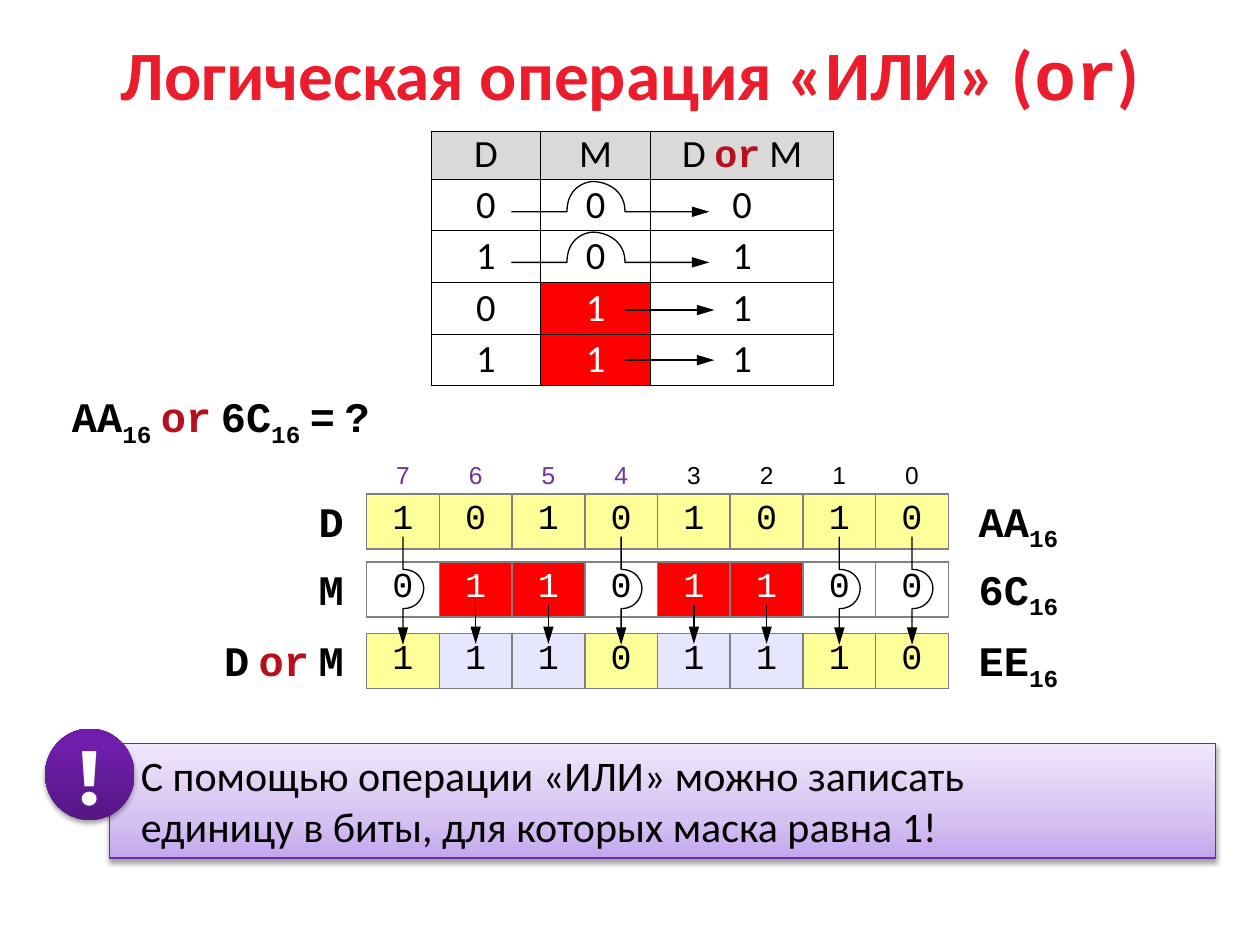
"""Build a slide explaining the bitwise OR operation with a truth table and a mask example."""
import copy
from dataclasses import dataclass
from typing import Any, Optional

import pptx
import pptx.dml.color
import pptx.enum.shapes
import pptx.enum.text
import pptx.oxml
import pptx.oxml.ns
import pptx.util

Cm = pptx.util.Cm
Pt = pptx.util.Pt
ALIGN = pptx.enum.text.PP_ALIGN
ANCHOR = pptx.enum.text.MSO_ANCHOR
SHAPE = pptx.enum.shapes.MSO_SHAPE


@dataclass(frozen=True)
class Theme:
    black: str = "000000"
    white: str = "FFFFFF"
    title_red: str = "EB1D2C"
    keyword: str = "B6101C"
    mask: str = "FF0000"
    header: str = "D9D9D9"
    kept: str = "FFFF99"
    raised: str = "E6E6FF"
    grid: str = "808080"
    high_bits: str = "7030A0"
    callout_line: str = "6E2C9F"
    callout_stops: tuple = ((0, "C5A6EE"), (0.35, "D6C2F2"), (1, "EFE7FB"))
    badge_stops: tuple = ((0, "551784"), (0.8, "6F1EAB"), (1, "701CAF"))
    sans: str = "Calibri"
    mono: str = "Courier New"
    plain: str = "Arial"
    badge_font: str = "Montserrat"
    title_size: float = 39.6
    badge_size: float = 44
    body_size: float = 24
    truth_size: float = 22
    bit_size: float = 20
    index_size: float = 14


THEME = Theme()


@dataclass(frozen=True)
class Run:
    text: str
    size: float = THEME.body_size
    font: str = THEME.mono
    color: str = THEME.black
    bold: bool = True
    subscript: bool = False


@dataclass(frozen=True)
class Cell:
    runs: list
    fill: Optional[str] = None
    anchor: Any = ANCHOR.TOP


@dataclass(frozen=True)
class ByteRow:
    top: float
    bits: str
    fills: list
    name: list
    name_width: float
    value: str


@dataclass(frozen=True)
class Hop:
    rise: float
    peak: float
    fall: float
    end: float
    height: float


def rgb(color: str) -> Any:
    """Return the colour object for a hex string."""
    return pptx.dml.color.RGBColor.from_string(color)


def apply_format(target: Any, values: dict) -> None:
    """Set every attribute named in the dict."""
    for name, value in values.items():
        setattr(target, name, value)


def write_runs(paragraph: Any, runs: list, alignment: Any) -> None:
    """Fill a paragraph with formatted runs, a vertical tab being a line break."""
    paragraph.alignment = alignment
    for item in runs:
        if item.text == "\v":
            paragraph.add_line_break()
            continue
        run = paragraph.add_run()
        run.text = item.text
        apply_format(run.font, {"size": Pt(item.size), "name": item.font, "bold": item.bold})
        run.font.color.rgb = rgb(item.color)
        if item.subscript:
            run._r.get_or_add_rPr().set("baseline", "-25000")


def add_label(slide: Any, box: tuple, runs: list, alignment: Any = ALIGN.LEFT) -> None:
    """Add a text box."""
    shape = slide.shapes.add_textbox(*map(Cm, box))
    shape.text_frame.word_wrap = True
    write_runs(shape.text_frame.paragraphs[0], runs, alignment)


def set_borders(cell: Any, color: Optional[str], width: float) -> None:
    """Give a cell four equal borders, or none without a colour."""
    paint = f'<a:solidFill><a:srgbClr val="{color}"/></a:solidFill>' if color else "<a:noFill/>"
    for index, side in enumerate("LRTB"):
        xml = f'<a:ln{side} {pptx.oxml.ns.nsdecls("a")} w="{Pt(width)}">{paint}</a:ln{side}>'
        cell._tc.get_or_add_tcPr().insert(index, pptx.oxml.parse_xml(xml))


def add_grid(slide: Any, corner: tuple, widths: list, heights: list, rows: list,
             border: Optional[str], line_width: float, margins: tuple) -> None:
    """Add a table of cells."""
    frame = slide.shapes.add_table(len(heights), len(widths), *map(Cm, (*corner, sum(widths), sum(heights))))
    table = frame.table
    apply_format(table, {"first_row": False, "horz_banding": False})
    for column, width in zip(table.columns, widths):
        column.width = Cm(width)
    for row, height, items in zip(table.rows, heights, rows):
        row.height = Cm(height)
        for cell, item in zip(row.cells, items):
            side, edge = map(Cm, margins)
            apply_format(cell, {"margin_left": side, "margin_right": side, "margin_top": edge,
                                "margin_bottom": edge, "vertical_anchor": item.anchor})
            if item.fill:
                cell.fill.solid()
                cell.fill.fore_color.rgb = rgb(item.fill)
            else:
                cell.fill.background()
            set_borders(cell, border, line_width)
            write_runs(cell.text_frame.paragraphs[0], item.runs, ALIGN.CENTER)


def style_arrow(shape: Any) -> None:
    """Draw a thin black line with a long arrowhead at its end."""
    shape.line.color.rgb = rgb(THEME.black)
    shape.line.width = Pt(0.75)
    head = f'<a:tailEnd {pptx.oxml.ns.nsdecls("a")} type="triangle" w="med" len="lg"/>'
    shape.line._get_or_add_ln().append(pptx.oxml.parse_xml(head))


def add_arrow(slide: Any, start: tuple, end: tuple) -> None:
    """Add a straight arrow."""
    connector = slide.shapes.add_connector(pptx.enum.shapes.MSO_CONNECTOR.STRAIGHT, *map(Cm, (*start, *end)))
    style_arrow(connector)
    effects = f'<a:effectLst {pptx.oxml.ns.nsdecls("a")}/>'
    connector._element.spPr.append(pptx.oxml.parse_xml(effects))


def quarter_arc(base: float, hop: Hop) -> list:
    """Return the curve's control points from the base line up to the peak."""
    return [(base, 0), (base, 0.78 * hop.height),
            (hop.peak + (base - hop.peak) / 3, hop.height), (hop.peak, hop.height)]


def bend_arcs(shape: Any) -> None:
    """Turn the six control points after the first segment into two cubic curves."""
    name = pptx.oxml.ns.qn
    segments = list(shape._element.spPr.iter(name("a:lnTo")))[1:7]
    for arc in (segments[:3], segments[3:]):
        curve = pptx.oxml.parse_xml(f'<a:cubicBezTo {pptx.oxml.ns.nsdecls("a")}/>')
        arc[0].addprevious(curve)
        for segment in arc:
            curve.append(segment.find(name("a:pt")))
            segment.getparent().remove(segment)


def add_hop(slide: Any, start: tuple, hop: Hop, downward: bool) -> None:
    """Add an arrow that goes around a digit."""
    route = quarter_arc(hop.rise, hop) + quarter_arc(hop.fall, hop)[-2::-1] + [(hop.end, 0)]
    left, top = start
    points = [(left + across, top + along) if downward else (left + along, top - across)
              for along, across in route]
    builder = slide.shapes.build_freeform(Cm(left), Cm(top), scale=1.0)
    builder.add_line_segments([(Cm(x), Cm(y)) for x, y in points], close=False)
    shape = builder.convert_to_shape()
    bend_arcs(shape)
    shape.fill.background()
    shape.shadow.inherit = False
    style_arrow(shape)


def add_glossy(slide: Any, kind: Any, box: tuple, stops: tuple, line: Optional[str]) -> Any:
    """Add a shape with an upward gradient and a soft shadow and return its text frame."""
    shape = slide.shapes.add_shape(kind, *map(Cm, box))
    shape.fill.gradient()
    shape.fill.gradient_angle = 90
    stop_list = shape._element.spPr.find(".//" + pptx.oxml.ns.qn("a:gsLst"))
    stop_list.insert(1, copy.deepcopy(stop_list[0]))
    for stop, (position, color) in zip(shape.fill.gradient_stops, stops):
        stop.position = position
        stop.color.rgb = rgb(color)
    if line:
        shape.line.color.rgb = rgb(line)
        shape.line.width = Pt(0.75)
    else:
        shape.line.fill.background()
    shape.shadow.inherit = False
    shadow = (f'<a:outerShdw {pptx.oxml.ns.nsdecls("a")} blurRad="{Pt(3.1)}" dist="{Pt(1.7)}" dir="5400000" '
              'rotWithShape="0"><a:srgbClr val="000000"><a:alpha val="37000"/></a:srgbClr></a:outerShdw>')
    shape._element.spPr.find(pptx.oxml.ns.qn("a:effectLst")).append(pptx.oxml.parse_xml(shadow))
    return shape.text_frame


def add_title(slide: Any) -> None:
    """Place and fill the title."""
    title = slide.shapes.title
    apply_format(title, dict(zip(("left", "top", "width", "height"), map(Cm, (1.27, 0.76, 22.86, 1.42)))))
    title.text_frame.vertical_anchor = ANCHOR.MIDDLE
    parts = (("Логическая операция «ИЛИ» (", THEME.sans), ("or", THEME.mono), (")", THEME.sans))
    runs = [Run(text, THEME.title_size, font, THEME.title_red) for text, font in parts]
    write_runs(title.text_frame.paragraphs[0], runs, ALIGN.CENTER)


def add_truth_table(slide: Any) -> None:
    """Add the truth table and its arrows."""
    def text(value: str, color: str = THEME.black) -> Run:
        return Run(value, THEME.truth_size, THEME.sans, color, False)

    keyword = Run("or", THEME.truth_size, color=THEME.keyword)
    rows = [[Cell(runs, THEME.header) for runs in ([text("D")], [text("M")], [text("D "), keyword, text(" M")])]]
    for data, mask in ((0, 0), (1, 0), (0, 1), (1, 1)):
        middle = Cell([text(str(mask), THEME.white if mask else THEME.black)],
                      THEME.mask if mask else THEME.white, ANCHOR.MIDDLE)
        rows.append([Cell([text(str(data))], anchor=ANCHOR.MIDDLE), middle,
                     Cell([text(str(data | mask))], anchor=ANCHOR.MIDDLE)])
    add_grid(slide, (8.69, 2.64), [2.21, 2.21, 3.7], [0.95] + [1.04] * 4, rows, THEME.black, 0.5, (0.36, 0))
    for top in (4.27, 5.29):
        add_hop(slide, (10.31, top), Hop(1.12, 1.65, 2.29, 3.99, 0.61), downward=False)
    for top in (6.25, 7.26):
        add_arrow(slide, (12.6, top), (14.4, top))


def add_mask_example(slide: Any) -> None:
    """Add the question, the three bytes with labels, and the arrows between them."""
    gap = Run(" ", font=THEME.sans)
    keyword = Run("or", color=THEME.keyword)
    base = Run("16", subscript=True)
    add_label(slide, (1.2, 7.75, 7.37, 1.3),
              [Run("AA"), base, gap, keyword, gap, Run("6C"), base, gap, Run("="), gap, Run("?")])
    left, step = 7.39, 11.73 / 8
    mask = "01101100"
    rows = (
        ByteRow(9.96, "10101010", [THEME.kept] * 8, [Run("D")], 1.22, "AA"),
        ByteRow(11.33, mask, [THEME.mask if bit == "1" else THEME.white for bit in mask], [Run("M")], 1.22, "6С"),
        ByteRow(12.77, "11101110", [THEME.raised if bit == "1" else THEME.kept for bit in mask],
                [Run("D"), gap, keyword, gap, Run("M")], 3.02, "EE"),
    )
    indexes = [Cell([Run(str(bit), THEME.index_size, THEME.plain, THEME.high_bits if bit > 3 else THEME.black, False)])
               for bit in range(7, -1, -1)]
    add_grid(slide, (left, 9.18), [step] * 8, [0.79], [indexes], None, 1, (0.25, 0.13))
    for row in rows:
        cells = [Cell([Run(bit, THEME.bit_size, color=THEME.white if fill == THEME.mask else THEME.black, bold=False)],
                      fill) for bit, fill in zip(row.bits, row.fills)]
        add_grid(slide, (left, row.top), [step] * 8, [1.1], [cells], THEME.grid, 1, (0.25, 0.13))
        label_top = row.top - 0.1
        add_label(slide, (7.18 - row.name_width, label_top, row.name_width, 1.28), row.name, ALIGN.RIGHT)
        add_label(slide, (19.48, label_top, 2.24, 1.28), [Run(row.value), base])
    for index, bit in enumerate(mask):
        center = left + step * (index + 0.5)
        if bit == "1":
            add_arrow(slide, (center, 12.19), (center, 12.98))
        else:
            add_hop(slide, (center, 10.82), Hop(0.66, 1.04, 1.45, 2.18, 0.42), downward=True)


def add_callout(slide: Any) -> None:
    """Add the conclusion with its exclamation badge."""
    frame = add_glossy(slide, SHAPE.RECTANGLE, (2.21, 14.99, 22.3, 2.31), THEME.callout_stops, THEME.callout_line)
    apply_format(frame, {"word_wrap": True, "margin_left": Cm(0.63), "vertical_anchor": ANCHOR.TOP})
    lines = ("С помощью операции «ИЛИ» можно записать", "\v", "единицу в биты, для которых маска равна 1!")
    write_runs(frame.paragraphs[0], [Run(line, font=THEME.sans, bold=False) for line in lines], ALIGN.LEFT)
    badge = add_glossy(slide, SHAPE.OVAL, (0.91, 14.69, 1.8, 1.85), THEME.badge_stops, None)
    apply_format(badge, {"word_wrap": False, "vertical_anchor": ANCHOR.MIDDLE})
    write_runs(badge.paragraphs[0], [Run("!", THEME.badge_size, THEME.badge_font, THEME.white)], ALIGN.CENTER)


def main() -> None:
    """Build and save the presentation."""
    presentation = pptx.Presentation()
    apply_format(presentation, {"slide_width": Cm(25.4), "slide_height": Cm(19.05)})
    slide = presentation.slides.add_slide(presentation.slide_layouts[5])
    for draw in (add_title, add_truth_table, add_mask_example, add_callout):
        draw(slide)
    presentation.save("out.pptx")


if __name__ == "__main__":
    main()
